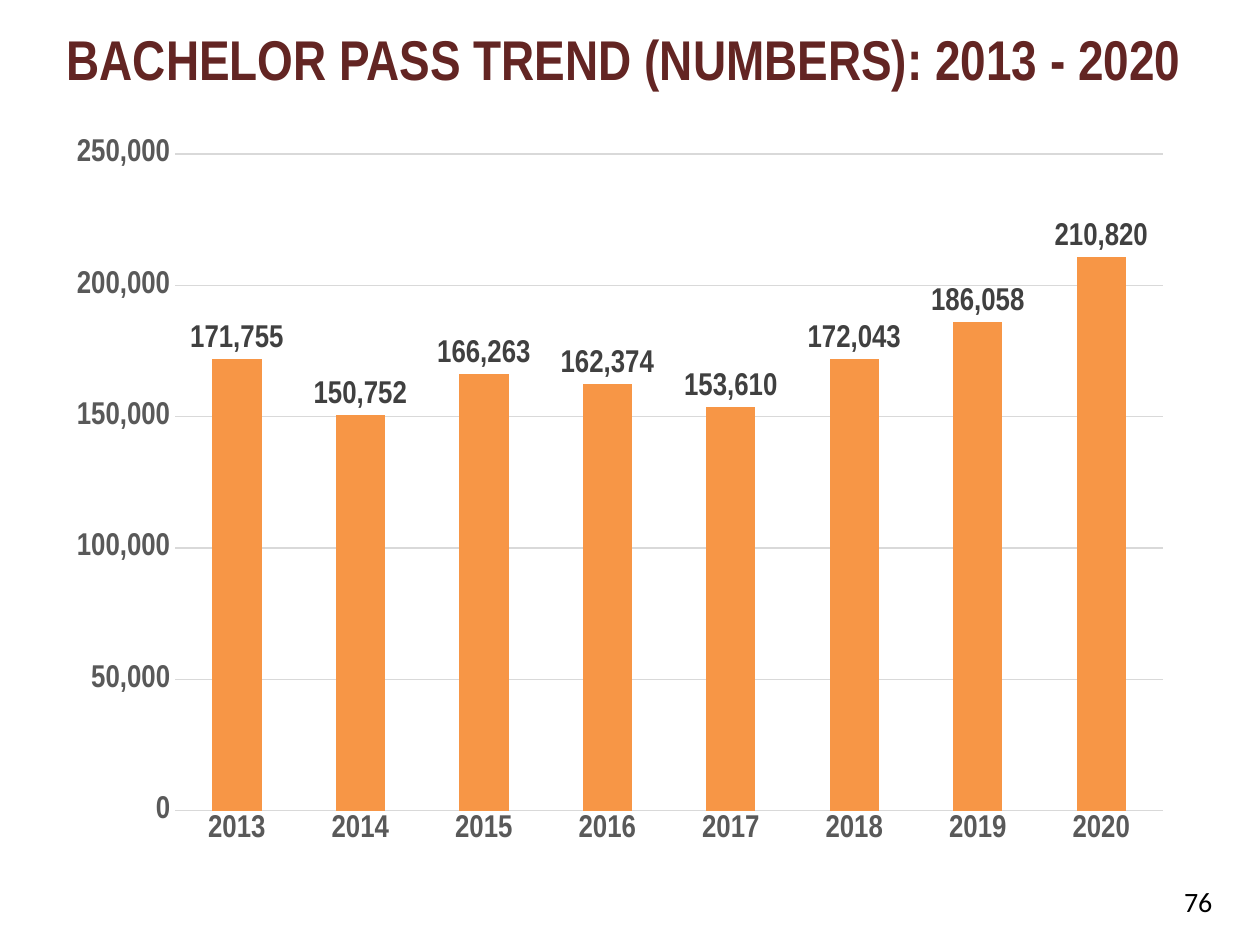
from dataclasses import dataclass

from pptx import Presentation
from pptx.chart.data import CategoryChartData
from pptx.dml.color import RGBColor
from pptx.enum.chart import XL_CHART_TYPE, XL_LABEL_POSITION, XL_TICK_MARK
from pptx.enum.text import MSO_ANCHOR, PP_ALIGN
from pptx.util import Inches, Pt

COLUMN_CLUSTERED = XL_CHART_TYPE.COLUMN_CLUSTERED
OUTSIDE_END = XL_LABEL_POSITION.OUTSIDE_END
NO_TICK = XL_TICK_MARK.NONE
MIDDLE = MSO_ANCHOR.MIDDLE
CENTER, RIGHT = PP_ALIGN.CENTER, PP_ALIGN.RIGHT
TITLE_ONLY_LAYOUT = 5
SLIDE_WIDTH, SLIDE_HEIGHT = Inches(10), Inches(7.5)


@dataclass(frozen=True)
class Theme:
    heading_font: str = "Arial Narrow"
    number_font: str = "Calibri"
    title_color: str = "632523"
    number_color: str = "000000"
    axis_color: str = "595959"
    label_color: str = "404040"
    grid_color: str = "D9D9D9"
    column_color: str = "F79646"
    title_size: int = 32
    chart_size: int = 18
    number_size: int = 16


THEME = Theme()
PASSES = {
    "2013": 171755,
    "2014": 150752,
    "2015": 166263,
    "2016": 162374,
    "2017": 153610,
    "2018": 172043,
    "2019": 186058,
    "2020": 210820,
}


def box(left, top, width, height):
    return tuple(Inches(length) for length in (left, top, width, height))


def format_font(font, name, size, color, bold=False):
    font.name = name
    font.size = Pt(size)
    font.bold = bold
    font.color.rgb = RGBColor.from_string(color)


def write_text(shape, text, align, **font_format):
    frame = shape.text_frame
    frame.word_wrap = True
    frame.vertical_anchor = MIDDLE
    paragraph = frame.paragraphs[0]
    paragraph.alignment = align
    run = paragraph.add_run()
    run.text = text
    format_font(run.font, **font_format)


def add_title(slide, text):
    title = slide.shapes.title
    title.left, title.top, title.width, title.height = box(-0.09, 0, 10.09, 0.92)
    write_text(title, text, CENTER, name=THEME.heading_font,
               size=THEME.title_size, color=THEME.title_color, bold=True)


def add_page_number(slide, text):
    number = slide.shapes.add_textbox(*box(7.39, 6.95, 2.33, 0.4))
    write_text(number, text, RIGHT, name=THEME.number_font,
               size=THEME.number_size, color=THEME.number_color)


def format_chart_font(font, color):
    format_font(font, THEME.heading_font, THEME.chart_size, color, bold=True)


def format_axis(axis):
    axis.major_tick_mark = NO_TICK
    axis.minor_tick_mark = NO_TICK
    axis.format.line.fill.background()
    format_chart_font(axis.tick_labels.font, THEME.axis_color)


def format_value_axis(axis):
    format_axis(axis)
    axis.minimum_scale, axis.maximum_scale = 0, 250000
    axis.major_unit = 50000
    axis.tick_labels.number_format = "#,##0"
    axis.tick_labels.number_format_is_linked = False
    axis.has_major_gridlines = True
    gridline = axis.major_gridlines.format.line
    gridline.width = Pt(0.75)
    gridline.color.rgb = RGBColor.from_string(THEME.grid_color)


def format_columns(plot):
    plot.gap_width = 150
    plot.vary_by_categories = False
    series = plot.series[0]
    series.invert_if_negative = False
    series.format.fill.solid()
    series.format.fill.fore_color.rgb = RGBColor.from_string(THEME.column_color)
    labels = series.data_labels
    labels.show_value = True
    labels.position = OUTSIDE_END
    labels.number_format = "#,##0"
    labels.number_format_is_linked = False
    format_chart_font(labels.font, THEME.label_color)


def add_pass_chart(slide):
    data = CategoryChartData(number_format="#,##0")
    data.categories = list(PASSES)
    data.add_series("Series 1", list(PASSES.values()))
    frame = slide.shapes.add_chart(COLUMN_CLUSTERED, *box(0.43, 0.99, 8.98, 5.83), data)
    chart = frame.chart
    chart.has_title = False
    chart.has_legend = False
    format_chart_font(chart.font, THEME.number_color)
    format_axis(chart.category_axis)
    format_value_axis(chart.value_axis)
    format_columns(chart.plots[0])


def main():
    presentation = Presentation()
    presentation.slide_width = SLIDE_WIDTH
    presentation.slide_height = SLIDE_HEIGHT
    slide = presentation.slides.add_slide(presentation.slide_layouts[TITLE_ONLY_LAYOUT])
    add_title(slide, "BACHELOR PASS TREND (NUMBERS): 2013 - 2020")
    add_page_number(slide, "76")
    add_pass_chart(slide)
    presentation.save("out.pptx")


if __name__ == "__main__":
    main()
